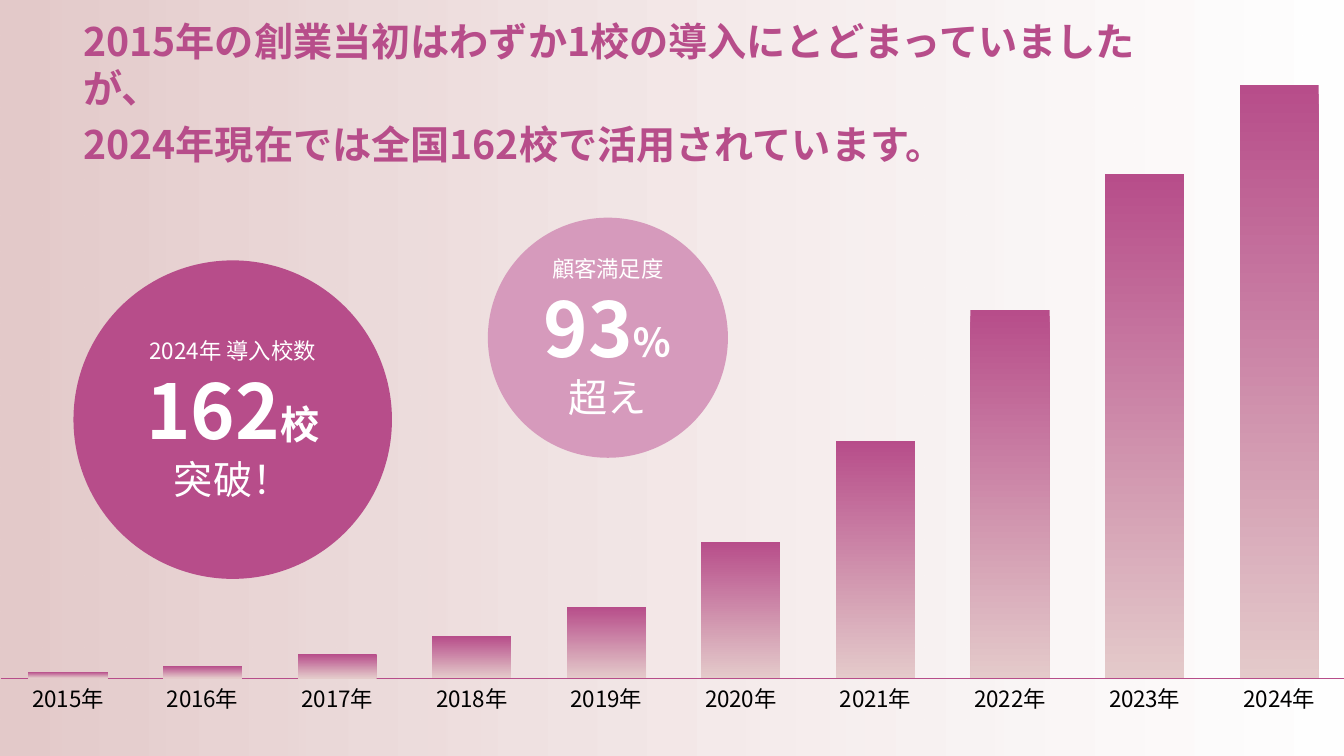
from lxml import etree
from pptx import Presentation
from pptx.chart.data import CategoryChartData
from pptx.dml.color import RGBColor
from pptx.enum.chart import XL_CHART_TYPE as ChartType, XL_TICK_MARK as TickMark
from pptx.enum.shapes import MSO_SHAPE as Shape
from pptx.enum.text import MSO_ANCHOR as Anchor, PP_ALIGN as Align
from pptx.oxml import parse_xml
from pptx.oxml.ns import nsdecls, qn
from pptx.util import Pt

FONT = "Noto Sans CJK JP"
MAGENTA, PINK, BLUSH = "B74D8A", "D69ABC", "E4CACA"
WHITE, BLACK = "FFFFFF", "000000"
WIDTH, HEIGHT = 960, 540

HEADING = [
    "2015年の創業当初はわずか1校の導入にとどまっていましたが、",
    "2024年現在では全国162校で活用されています。",
]
FIRST_YEAR = 2015
ADOPTION = [1, 2, 4, 7, 12, 23, 40, 62, 85, 100]
AXIS_MAXIMUM = 111
PLOT_AREA = {"x": 0.002, "y": 0.026, "w": 0.978, "h": 0.871}
# left, top, diameter, fill, caption, figure, unit, closing word
BADGES = [
    (52.5, 186, 227.5, MAGENTA, "2024年 導入校数", "162", "校", "突破！"),
    (348.5, 155.5, 171.5, PINK, "顧客満足度", "93", "％", "超え"),
]


def color(hex_string):
    return RGBColor.from_string(hex_string)


def style(font, size, hex_string, bold=False):
    font.size, font.bold = Pt(size), bold
    font.color.rgb = color(hex_string)
    font.name = FONT
    # East Asian glyphs take their typeface from a separate element
    etree.SubElement(font._rPr, qn("a:ea")).set("typeface", FONT)


def fill_gradient(fill, start, end, angle):
    fill.gradient()
    fill.gradient_angle = angle
    for stop, hex_string in zip(fill.gradient_stops, (start, end)):
        stop.color.rgb = color(hex_string)


def add_plain_shape(slide, kind, left, top, width, height):
    shape = slide.shapes.add_shape(kind, Pt(left), Pt(top), Pt(width), Pt(height))
    shape.shadow.inherit = False
    shape.line.fill.background()
    return shape


def add_background(slide):
    panel = add_plain_shape(slide, Shape.RECTANGLE, 0, 0, WIDTH, HEIGHT)
    fill_gradient(panel.fill, BLUSH, WHITE, 0)
    end_color = panel._element.xpath(".//a:gs/a:srgbClr")[-1]
    etree.SubElement(end_color, qn("a:alpha")).set("val", "70000")


def add_growth_chart(slide):
    data = CategoryChartData()
    data.categories = [f"{FIRST_YEAR + i}年" for i in range(len(ADOPTION))]
    data.add_series("Series 1", ADOPTION)
    chart = slide.shapes.add_chart(
        ChartType.COLUMN_CLUSTERED, Pt(-1.5), Pt(0), Pt(983), Pt(HEIGHT), data
    ).chart
    chart.has_legend = chart.has_title = False
    style(chart.font, 10, BLACK)

    plot = chart.plots[0]
    plot.gap_width, plot.overlap, plot.vary_by_categories = 70, -27, False
    series = plot.series[0]
    series.invert_if_negative = False
    fill_gradient(series.format.fill, MAGENTA, BLUSH, 270)

    years = chart.category_axis
    years.major_tick_mark = years.minor_tick_mark = TickMark.NONE
    years.format.line.color.rgb = color(MAGENTA)
    years.format.line.width = Pt(0.75)
    style(years.tick_labels.font, 16, BLACK)

    values = chart.value_axis
    values.minimum_scale, values.maximum_scale = 0, AXIS_MAXIMUM
    values.has_major_gridlines = values.visible = False

    sizes = "".join(f'<c:{key} val="{value}"/>' for key, value in PLOT_AREA.items())
    layout = parse_xml(
        f'<c:layout {nsdecls("c")}><c:manualLayout><c:layoutTarget val="inner"/>'
        f'<c:xMode val="edge"/><c:yMode val="edge"/>{sizes}</c:manualLayout></c:layout>'
    )
    plot_area = chart._chartSpace.chart.plotArea
    for automatic in plot_area.findall(qn("c:layout")):
        plot_area.remove(automatic)
    plot_area.insert(0, layout)


def add_badge(slide, left, top, diameter, fill, caption, figure, unit, closing):
    circle = add_plain_shape(slide, Shape.OVAL, left, top, diameter, diameter)
    circle.fill.solid()
    circle.fill.fore_color.rgb = color(fill)
    frame = circle.text_frame
    frame.word_wrap, frame.vertical_anchor = False, Anchor.MIDDLE
    lines = [
        ([(caption, 16)], False),
        ([(figure, 54), (unit, 28)], True),
        ([(closing, 28)], False),
    ]
    for i, (runs, bold) in enumerate(lines):
        paragraph = frame.add_paragraph() if i else frame.paragraphs[0]
        paragraph.alignment = Align.CENTER
        for text, size in runs:
            run = paragraph.add_run()
            run.text = text
            style(run.font, size, WHITE, bold)


def add_heading(slide):
    frame = slide.shapes.add_textbox(Pt(52.5), Pt(18), Pt(773), Pt(96)).text_frame
    frame.word_wrap, frame.vertical_anchor = True, Anchor.MIDDLE
    for i, text in enumerate(HEADING):
        paragraph = frame.add_paragraph() if i else frame.paragraphs[0]
        paragraph.text = text
        paragraph.space_before = Pt(6 if i else 0)
        style(paragraph.font, 28, MAGENTA, True)


def main():
    presentation = Presentation()
    presentation.slide_width, presentation.slide_height = Pt(WIDTH), Pt(HEIGHT)
    slide = presentation.slides.add_slide(presentation.slide_layouts[6])
    add_background(slide)
    add_growth_chart(slide)
    for badge in BADGES:
        add_badge(slide, *badge)
    add_heading(slide)
    presentation.save("out.pptx")


if __name__ == "__main__":
    main()
